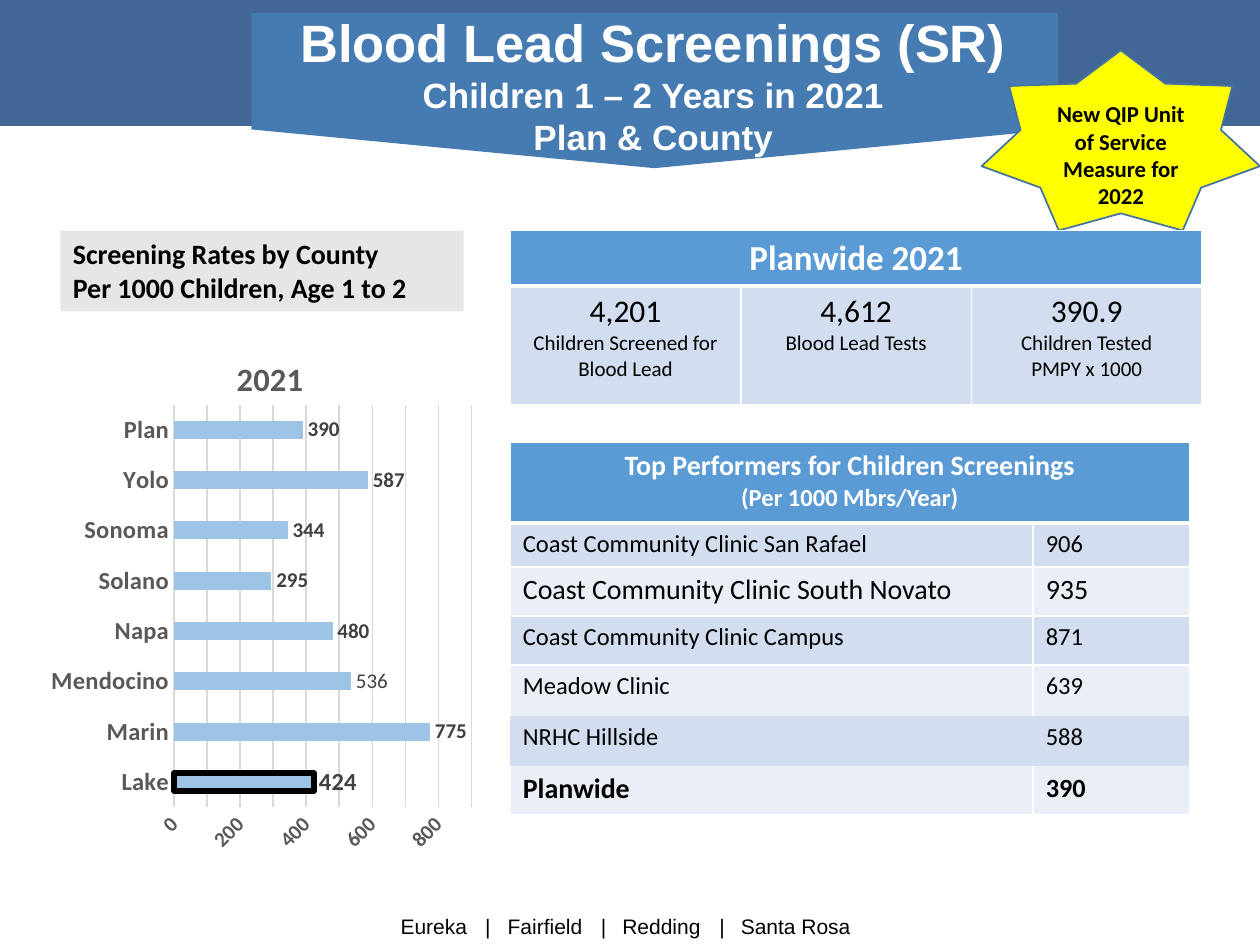
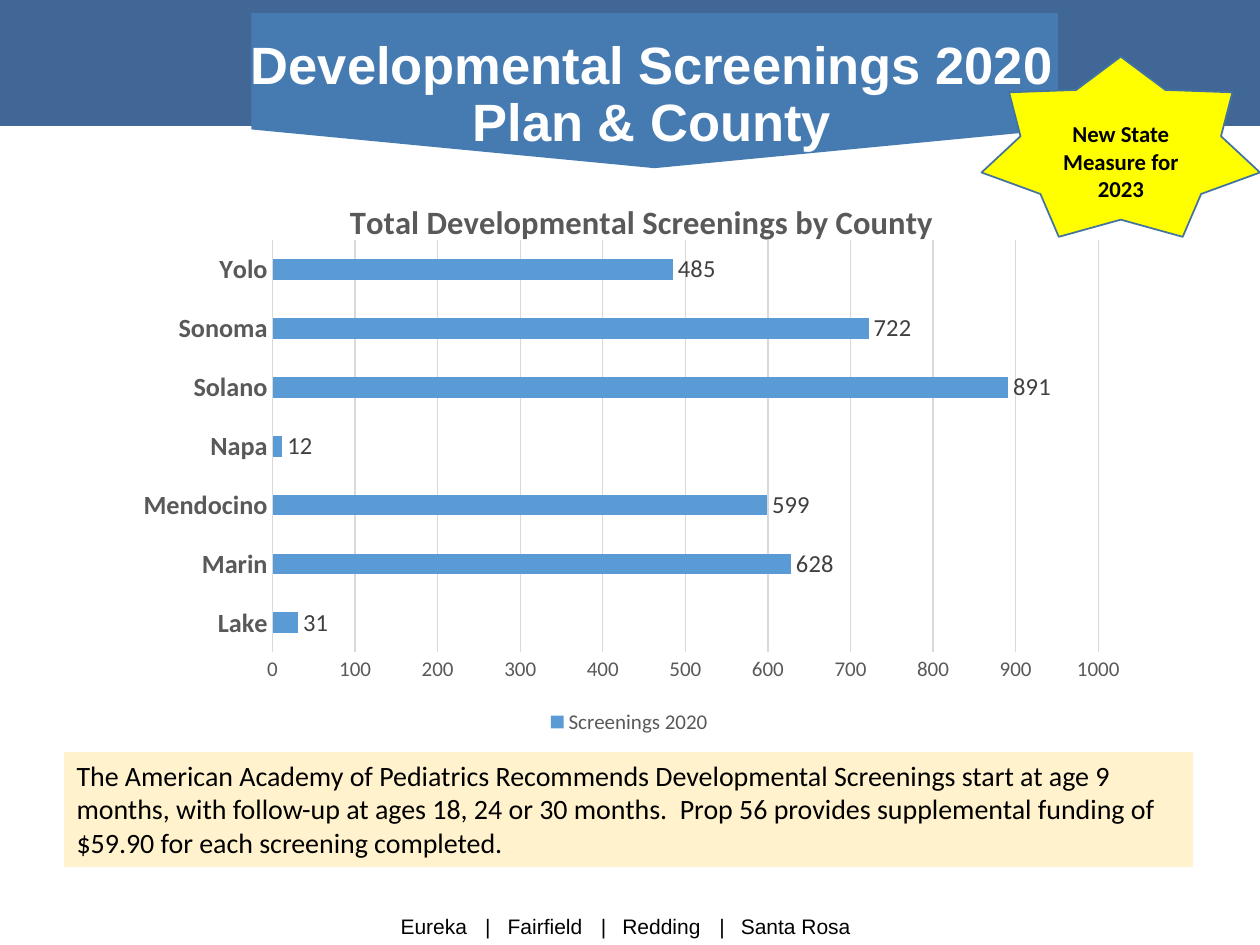
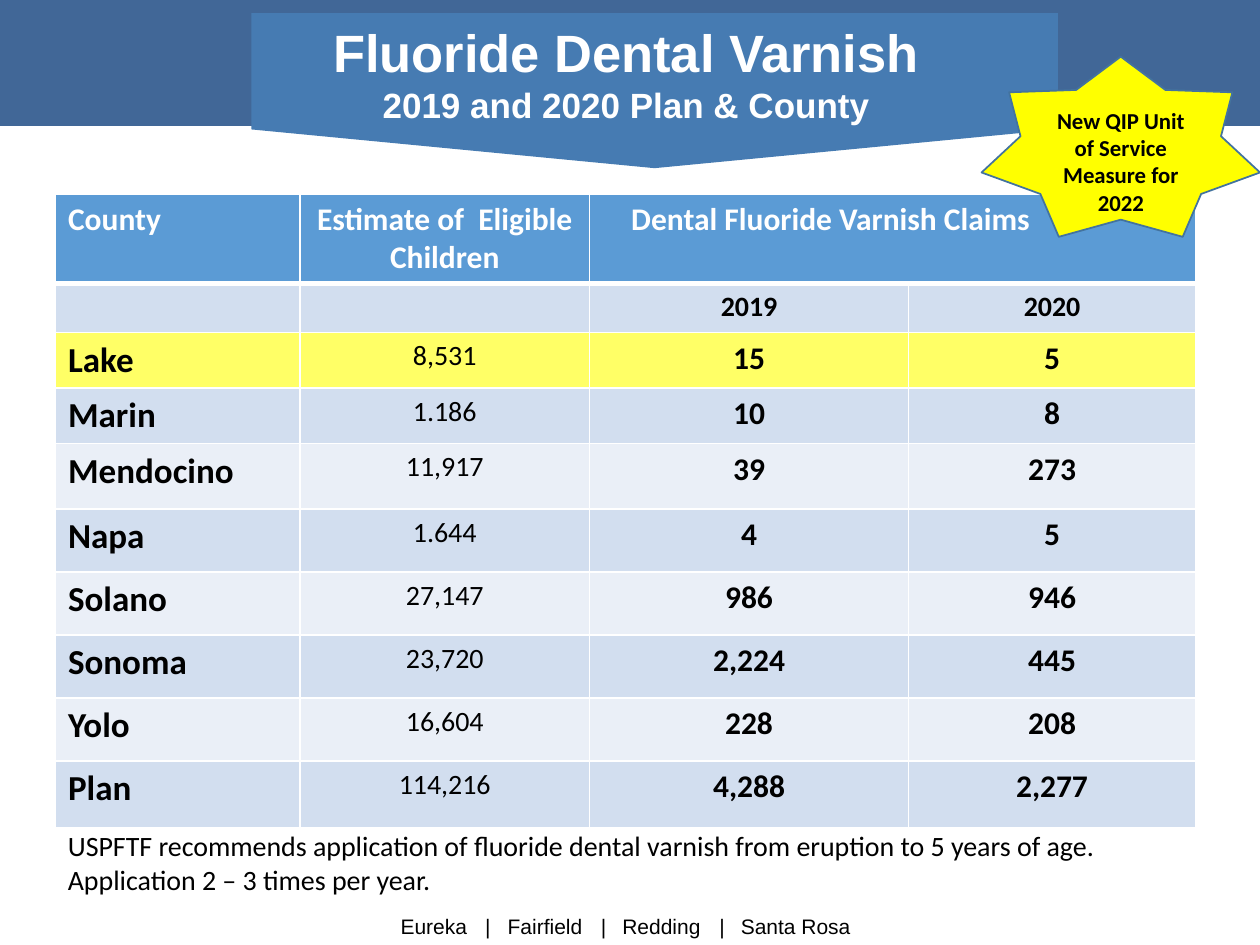
from pptx import Presentation
from pptx.chart.data import CategoryChartData
from pptx.dml.color import RGBColor
from pptx.enum.chart import XL_CHART_TYPE, XL_LABEL_POSITION, XL_LEGEND_POSITION, XL_TICK_MARK
from pptx.enum.shapes import MSO_SHAPE, PP_PLACEHOLDER
from pptx.enum.text import MSO_ANCHOR, MSO_AUTO_SIZE, PP_ALIGN
from pptx.oxml import parse_xml
from pptx.oxml.ns import nsdecls, qn
from pptx.util import Emu, Inches, Pt

LEFT, CENTER = PP_ALIGN.LEFT, PP_ALIGN.CENTER
TOP, MIDDLE = MSO_ANCHOR.TOP, MSO_ANCHOR.MIDDLE
RECT, PENTAGON, STAR = MSO_SHAPE.RECTANGLE, MSO_SHAPE.PENTAGON, MSO_SHAPE.STAR_7_POINT
OUTSIDE_END = XL_LABEL_POSITION.OUTSIDE_END
NO_TICKS = XL_TICK_MARK.NONE


class Theme:
    heading_font, body_font = "Arial", "Calibri"
    white, black = "FFFFFF", "000000"
    band, banner = "416797", "467BB2"
    header, stripe_dark, stripe_light = "5B9BD5", "D2DEEF", "EAEFF7"
    highlight, star, star_line = "FFFF66", "FFFF00", "43739E"
    gray_box, cream_box = "E7E6E6", "FFF2CC"
    pale_bar, bar = "9DC3E6", "5B9BD5"
    axis_text, label_text, grid = "595959", "404040", "D9D9D9"
    title, subtitle, chart_title = 30, 20, 18.6
    body, badge, footer = 16, 13, 12


# Text lines are (text, size, bold).
FOOTER = "Eureka\t|\tFairfield\t|\tRedding\t|\tSanta Rosa"
FOOTER_TABS = (0.67, 0.85, 1.59, 1.76, 2.53, 2.7)

LEAD_TITLE = [
    ("Blood Lead Screenings (SR)", Theme.title, True),
    ("Children 1 – 2 Years in 2021", Theme.subtitle, True),
    ("Plan & County", Theme.subtitle, True),
]
RATES_CAPTION = [
    ("Screening Rates by County", Theme.body, True),
    ("Per 1000 Children, Age 1 to 2", Theme.body, True),
]
QIP_BADGE = "New QIP Unit of Service Measure for 2022"
LEAD_RATES = {"Lake": 424, "Marin": 775, "Mendocino": 536, "Napa": 480,
              "Solano": 295, "Sonoma": 344, "Yolo": 587, "Plan": 390}
PLANWIDE = [
    ("4,201", "Children Screened for Blood Lead"),
    ("4,612", "Blood Lead Tests"),
    ("390.9", "Children Tested", "PMPY x 1000"),
]
PERFORMERS_HEADER = [
    ("Top Performers for Children Screenings", 16, True),
    ("(Per 1000 Mbrs/Year)", 14, True),
]
# name, rate, name size, rate size, bold
PERFORMERS = [
    ("Coast Community Clinic San Rafael", "906", 14, 14, False),
    ("Coast Community Clinic South Novato", "935", 16, 16, False),
    ("Coast Community Clinic Campus", "871", 14, 14, False),
    ("Meadow Clinic", "639", 14, 14, False),
    ("NRHC Hillside", "588", 14, 14, False),
    ("Planwide", "390", 16, 15, True),
]
BARE_ROW = 5

DEVELOPMENT_TITLE = [("Developmental Screenings 2020\vPlan & County", Theme.title, True)]
STATE_BADGE = "New State Measure for 2023"
DEVELOPMENT_COUNTS = {"Lake": 31, "Marin": 628, "Mendocino": 599, "Napa": 12,
                      "Solano": 891, "Sonoma": 722, "Yolo": 485}
ACADEMY_NOTE = ("The American Academy of Pediatrics Recommends Developmental Screenings "
                "start at age 9 months, with follow-up at ages 18, 24 or 30 months.  Prop 56 "
                "provides supplemental funding of $59.90 for each screening completed.")

VARNISH_TITLE = [
    ("Fluoride Dental Varnish", Theme.title, True),
    ("2019 and 2020 Plan & County", Theme.subtitle, True),
]
VARNISH_HEADER = ("County", "Estimate of  Eligible Children", "Dental Fluoride Varnish Claims")
VARNISH_YEARS = ("", "", "2019", "2020")
VARNISH = [
    ("Lake", "8,531", "15", "5"),
    ("Marin", "1.186", "10", "8"),
    ("Mendocino", "11,917", "39", "273"),
    ("Napa", "1.644", "4", "5"),
    ("Solano", "27,147", "986", "946"),
    ("Sonoma", "23,720", "2,224", "445"),
    ("Yolo", "16,604", "228", "208"),
    ("Plan", "114,216", "4,288", "2,277"),
]
VARNISH_NOTE = ("USPFTF recommends application of fluoride dental varnish from eruption "
                "to 5 years of age.  Application 2 – 3 times per year.")


def rgb(color):
    return RGBColor.from_string(color)


def inches(*lengths):
    return [Inches(n) for n in lengths]


def style(font, size, color, bold=False, name=Theme.body_font):
    font.size, font.bold, font.name = Pt(size), bold, name
    font.color.rgb = rgb(color)


def write(tf, lines, color=Theme.black, align=LEFT, name=Theme.body_font, spacing=None):
    for i, (text, size, bold) in enumerate(lines):
        p = tf.add_paragraph() if i else tf.paragraphs[0]
        p.text, p.alignment = text, align
        if spacing:
            p.line_spacing = spacing
        style(p.font, size, color, bold, name)


def add_shape(slide, kind, at, fill, line=None):
    sp = slide.shapes.add_shape(kind, *inches(*at))
    sp.shadow.inherit = False
    sp.fill.solid()
    sp.fill.fore_color.rgb = rgb(fill)
    if line:
        sp.line.color.rgb, sp.line.width = rgb(line), Pt(1)
    else:
        sp.line.fill.background()
    return sp


def add_text(slide, at, lines, fill=None):
    sp = add_shape(slide, RECT, at, fill) if fill else slide.shapes.add_textbox(*inches(*at))
    sp.text_frame.word_wrap = True
    sp.text_frame.vertical_anchor = TOP
    write(sp.text_frame, lines)


def add_badge(slide, top, text):
    sp = add_shape(slide, STAR, (7.79, top, 2.21, 1.43), Theme.star, Theme.star_line)
    sp.adjustments[0] = 0.36
    tf = sp.text_frame
    tf.word_wrap, tf.vertical_anchor, tf.margin_top = True, MIDDLE, Inches(0.35)
    write(tf, [(text, Theme.badge, True)], align=CENTER)


def set_title(slide, at, lines, anchor=TOP, spacing=None):
    sp = slide.shapes.title
    sp.left, sp.top, sp.width, sp.height = inches(*at)
    tf = sp.text_frame
    tf.word_wrap, tf.auto_size, tf.vertical_anchor = True, MSO_AUTO_SIZE.NONE, anchor
    write(tf, lines, Theme.white, CENTER, Theme.heading_font, spacing)


def furnish_layout(layout, slide):
    """Draw the band, banner and footer on a slide, then move them to its layout."""
    for ph in list(layout.placeholders):
        if ph.placeholder_format.type != PP_PLACEHOLDER.TITLE:
            ph.element.getparent().remove(ph.element)
    band = add_shape(slide, RECT, (0, 0, 10, 1), Theme.band)
    banner = add_shape(slide, PENTAGON, (4.58, -2.48, 1.23, 6.4), Theme.banner)
    banner.adjustments[0], banner.rotation = 0.25, 90
    footer = slide.shapes.add_textbox(*inches(3.18, 7.2, 3.7, 0.3))
    tf = footer.text_frame
    tf.margin_left = 0
    p = tf.paragraphs[0]
    p.text = FOOTER
    tabs = "".join(f'<a:tab pos="{Inches(pos)}" algn="l"/>' for pos in FOOTER_TABS)
    p.alignment = LEFT
    p._p.get_or_add_pPr().append(parse_xml(f'<a:tabLst {nsdecls("a")}>{tabs}</a:tabLst>'))
    style(p.font, Theme.footer, Theme.black, name=Theme.heading_font)
    for sp in (band, banner, footer):
        layout.shapes.element.append(sp.element)


def set_borders(cell, left=1, right=1, top=1, bottom=1):
    """Give the cell white borders of these point widths; 0 means no border."""
    tcPr = cell._tc.get_or_add_tcPr()
    for side, width in zip("LRTB", (left, right, top, bottom)):
        paint = f'<a:solidFill><a:srgbClr val="{Theme.white}"/></a:solidFill>' if width else "<a:noFill/>"
        tcPr.append(parse_xml(f'<a:ln{side} {nsdecls("a")} w="{Pt(width)}">{paint}</a:ln{side}>'))


def add_table(slide, left, top, widths, heights, grid, highlight=None, bare=None):
    """Fill a banded table; grid cells are (lines, alignment), None continues a merged cell."""
    at = inches(left, top, sum(widths), sum(heights))
    table = slide.shapes.add_table(len(heights), len(widths), *at).table
    for column, width in zip(table.columns, widths):
        column.width = Inches(width)
    for row, height in zip(table.rows, heights):
        row.height = Inches(height)
    for r, contents in enumerate(grid):
        fill = Theme.stripe_dark if r % 2 else Theme.stripe_light
        if r == 0:
            fill = Theme.header
        elif r == highlight:
            fill = Theme.highlight
        side = 0 if r == bare else 1
        upper = 3 if r == 1 else 0 if bare and r in (bare, bare + 1) else 1
        lower = 3 if r == 0 else 0 if bare and r in (bare - 1, bare) else 1
        for c, content in enumerate(contents):
            cell = table.cell(r, c)
            set_borders(cell, side, side, upper, lower)
            cell.fill.solid()
            cell.fill.fore_color.rgb = rgb(fill)
            if content:
                lines, align = content
                write(cell.text_frame, lines, Theme.black if r else Theme.white, align)
        if None in contents:
            table.cell(r, contents.index(None) - 1).merge(table.cell(r, len(contents) - 1))
    return table


def manual_layout(x, y, w=None, h=None):
    target = '<c:layoutTarget val="inner"/>' if w else ""
    size = f'<c:w val="{w}"/><c:h val="{h}"/>' if w else ""
    return parse_xml(
        f'<c:layout {nsdecls("c")}><c:manualLayout>{target}<c:xMode val="edge"/>'
        f'<c:yMode val="edge"/><c:x val="{x}"/><c:y val="{y}"/>{size}</c:manualLayout></c:layout>')


def place(parent, index, layout):
    for old in parent.findall(qn("c:layout")):
        parent.remove(old)
    parent.insert(index, layout)


def add_bar_chart(slide, at, values, name, title, color, title_at, plot_at,
                  category_size, label_size, bold, top_value):
    data = CategoryChartData()
    data.categories = list(values)
    data.add_series(name, list(values.values()))
    chart = slide.shapes.add_chart(XL_CHART_TYPE.BAR_CLUSTERED, *inches(*at), data).chart
    style(chart.font, 10, Theme.black)
    chart.has_legend = False
    chart.has_title = True
    write(chart.chart_title.text_frame, [(title, Theme.chart_title, True)], Theme.axis_text, CENTER)
    style(chart.chart_title.text_frame.paragraphs[0].runs[0].font,
          Theme.chart_title, Theme.axis_text, True)

    plot = chart.plots[0]
    plot.gap_width, plot.vary_by_categories = 182, False
    series = plot.series[0]
    series.format.fill.solid()
    series.format.fill.fore_color.rgb = rgb(color)
    labels = series.data_labels
    labels.show_value, labels.position = True, OUTSIDE_END
    style(labels.font, label_size, Theme.label_text, bold)

    category, value = chart.category_axis, chart.value_axis
    for axis, size, is_bold in ((category, category_size, True), (value, 12, bold)):
        axis.major_tick_mark = axis.minor_tick_mark = NO_TICKS
        style(axis.tick_labels.font, size, Theme.axis_text, is_bold)
    value.minimum_scale, value.maximum_scale, value.major_unit = 0, top_value, 100
    value.format.line.fill.background()
    category.has_major_gridlines, value.has_major_gridlines = False, True
    for line in (category.format.line, value.major_gridlines.format.line):
        line.color.rgb, line.width = rgb(Theme.grid), Pt(0.75)

    place(chart.element.find(".//" + qn("c:plotArea")), 0, manual_layout(*plot_at))
    place(chart.element.find(".//" + qn("c:title")), 1, manual_layout(*title_at))
    return chart


def lead_slide(slide):
    set_title(slide, (2.02, 0.03, 6.33, 1.3), LEAD_TITLE)
    grid = [[(PERFORMERS_HEADER, CENTER), None]]
    for clinic, rate, clinic_size, rate_size, bold in PERFORMERS:
        grid.append([([(clinic, clinic_size, bold)], LEFT), ([(rate, rate_size, bold)], LEFT)])
    add_table(slide, 4.05, 3.51, (4.15, 1.24), (0.64, 0.35, 0.39, 0.39, 0.4, 0.4, 0.39),
              grid, bare=BARE_ROW)
    add_text(slide, (0.48, 1.83, 3.2, 0.64), RATES_CAPTION, Theme.gray_box)
    add_badge(slide, 0.4, QIP_BADGE)

    chart = add_bar_chart(slide, (0.34, 2.52, 3.47, 4.32), LEAD_RATES, "2021", "2021",
                          Theme.pale_bar, (0.43, 0.06), (0.3, 0.16, 0.68, 0.74),
                          category_size=14, label_size=12, bold=True, top_value=900)
    points = chart.plots[0].series[0].points
    outline = points[0].format.line
    outline.color.rgb, outline.width = rgb(Theme.black), Pt(3)
    points[0].format.fill.solid()
    points[0].format.fill.fore_color.rgb = rgb(Theme.pale_bar)
    for county, size, bold in (("Lake", 14, True), ("Mendocino", 12, False)):
        label = points[list(LEAD_RATES).index(county)].data_label
        style(label.font, size, Theme.label_text, bold)
        label.position = OUTSIDE_END
    chart.element.find(f'.//{qn("c:valAx")}/{qn("c:txPr")}/{qn("a:bodyPr")}').set("rot", "-2700000")

    totals = [([(number, 18, False)] + [(text, 12, False) for text in captions], CENTER)
              for number, *captions in PLANWIDE]
    add_table(slide, 4.05, 1.83, [1.83] * 3, (0.39, 0.94),
              [[([("Planwide 2021", 20, True)], CENTER), None, None], totals])


def development_slide(slide):
    set_title(slide, (0.35, 0.25, 9.65, 1.02), DEVELOPMENT_TITLE, MIDDLE, 0.9)
    add_text(slide, (0.51, 5.97, 8.96, 0.91), [(ACADEMY_NOTE, Theme.body, False)], Theme.cream_box)
    chart = add_bar_chart(slide, (0.95, 1.26, 8.09, 4.61), DEVELOPMENT_COUNTS, "Screenings 2020",
                          "Total Developmental Screenings by County", Theme.bar,
                          (0.22, 0.06), (0.15, 0.14, 0.81, 0.71),
                          category_size=15, label_size=14, bold=False, top_value=1000)
    chart.has_legend = True
    chart.legend.position = XL_LEGEND_POSITION.BOTTOM
    chart.legend.include_in_layout = False
    style(chart.legend.font, 12, Theme.axis_text)
    add_badge(slide, 0.45, STATE_BADGE)


def varnish_slide(slide):
    set_title(slide, (1.33, 0.11, 7.28, 0.94), VARNISH_TITLE)
    aligns = (LEFT, CENTER, CENTER, CENTER)
    styles = ((20, True), (16, False), (18, True), (18, True))
    header = [([(text, 18, True)], align) for text, align in zip(VARNISH_HEADER, (LEFT, CENTER, LEFT))]
    grid = [header + [None], [([(year, 16, True)], CENTER) for year in VARNISH_YEARS]]
    for row in VARNISH:
        grid.append([([(text, *look)], align) for text, look, align in zip(row, styles, aligns)])
    table = add_table(slide, 0.44, 1.54, (1.94, 2.3, 2.53, 2.28),
                      (0.69, 0.39, 0.43, 0.44, 0.52, 0.5, 0.5, 0.5, 0.5, 0.53), grid, highlight=2)
    table.cell(0, 2).margin_left = Inches(0.33)
    add_badge(slide, 0.45, QIP_BADGE)
    add_text(slide, (0.44, 6.53, 9.05, 0.64), [(VARNISH_NOTE, Theme.body, False)])


def main():
    prs = Presentation()
    prs.slide_width, prs.slide_height = inches(10, 7.5)
    layout = prs.slide_layouts[5]
    for number, build in enumerate((lead_slide, development_slide, varnish_slide)):
        slide = prs.slides.add_slide(layout)
        if number == 0:
            furnish_layout(layout, slide)
        build(slide)
    prs.save("out.pptx")


if __name__ == "__main__":
    main()
